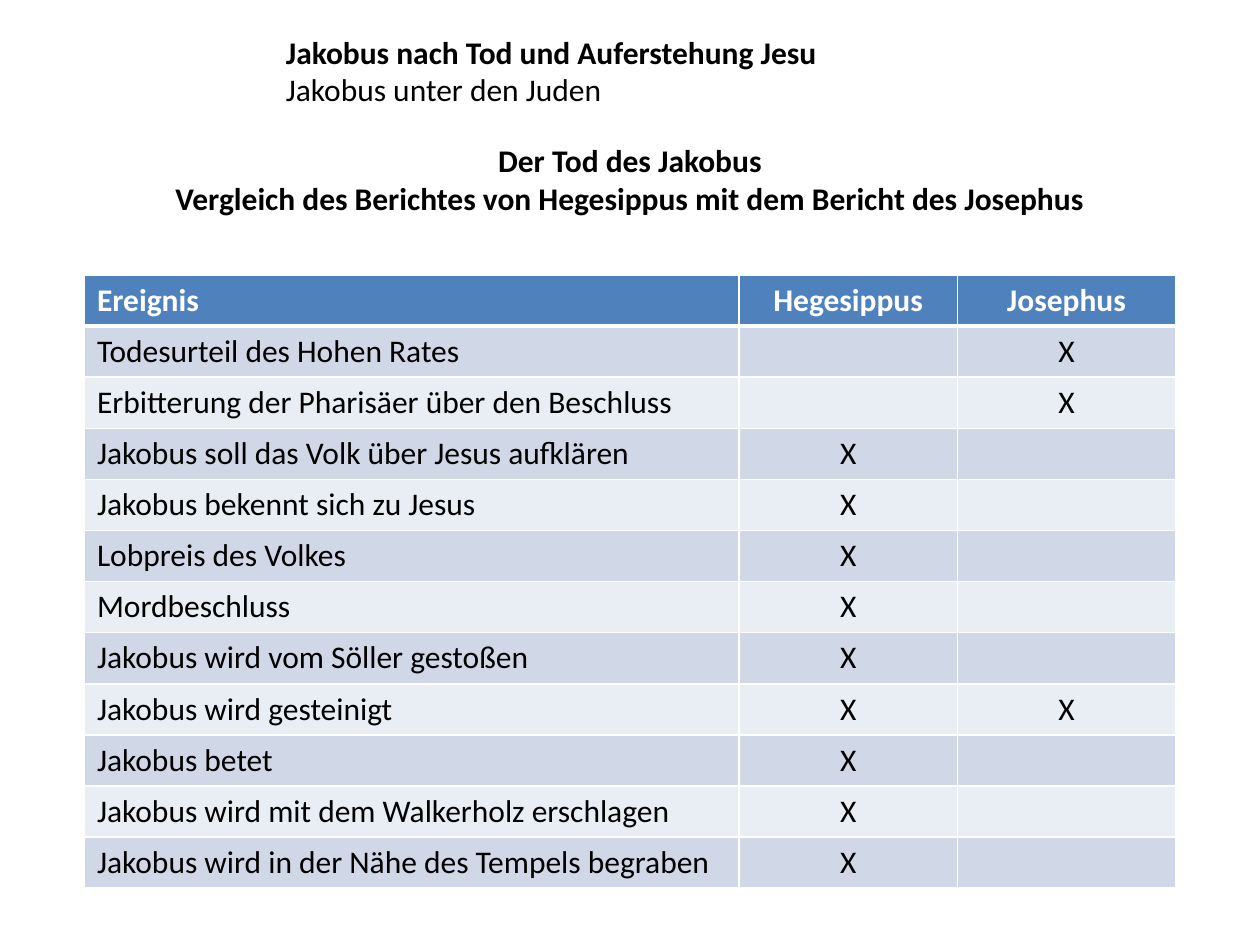
from lxml import etree
from pptx import Presentation
from pptx import util as u
from pptx.dml.color import RGBColor
from pptx.enum import text
from pptx.oxml.ns import qn

BLACK = RGBColor(0x00, 0x00, 0x00)
WHITE = RGBColor(0xFF, 0xFF, 0xFF)
HEADER = RGBColor(0x4F, 0x81, 0xBD)
BANDS = RGBColor(0xD0, 0xD8, 0xE8), RGBColor(0xE9, 0xED, 0xF4)
FONT, SIZE = "Calibri", u.Pt(18)
LEFT, CENTER = text.PP_ALIGN.LEFT, text.PP_ALIGN.CENTER

COLUMNS = ("Ereignis", "Hegesippus", "Josephus")
COLUMN_SHARES = (0.6, 0.2, 0.2)
EVENTS = [
    ("Todesurteil des Hohen Rates", "", "X"),
    ("Erbitterung der Pharisäer über den Beschluss", "", "X"),
    ("Jakobus soll das Volk über Jesus aufklären", "X", ""),
    ("Jakobus bekennt sich zu Jesus", "X", ""),
    ("Lobpreis des Volkes", "X", ""),
    ("Mordbeschluss", "X", ""),
    ("Jakobus wird vom Söller gestoßen", "X", ""),
    ("Jakobus wird gesteinigt", "X", "X"),
    ("Jakobus betet", "X", ""),
    ("Jakobus wird mit dem Walkerholz erschlagen", "X", ""),
    ("Jakobus wird in der Nähe des Tempels begraben", "X", ""),
]


def style_paragraph(p, color, bold, align):
    p.alignment = align
    p.font.name, p.font.size, p.font.bold = FONT, SIZE, bold
    p.font.color.rgb = color
    for r in p.runs:
        r.font.name, r.font.size, r.font.bold = FONT, SIZE, bold
        r.font.color.rgb = color


def add_heading(s, box, lines, align, wrap):
    """Place (wording, bold) lines in one text box."""
    tf = s.shapes.add_textbox(*box).text_frame
    tf.word_wrap = wrap
    tf.auto_size = text.MSO_AUTO_SIZE.SHAPE_TO_FIT_TEXT
    tf.text = "\n".join(wording for wording, _ in lines)
    for p, (_, bold) in zip(tf.paragraphs, lines):
        style_paragraph(p, BLACK, bold, align)


def set_borders(cell, bottom, top):
    """Draw white cell borders, 1 pt at the sides."""
    tc_pr = cell._tc.get_or_add_tcPr()
    for side, points in (("L", 1), ("R", 1), ("T", top), ("B", bottom)):
        ln = etree.SubElement(tc_pr, qn(f"a:ln{side}"), w=str(u.Pt(points)))
        fill = etree.SubElement(ln, qn("a:solidFill"))
        etree.SubElement(fill, qn("a:srgbClr"), val=str(WHITE))


def add_comparison(s, box):
    rows = [COLUMNS, *EVENTS]
    width, height = box[2:]
    table = s.shapes.add_table(len(rows), len(COLUMNS), *box).table
    for column, share in zip(table.columns, COLUMN_SHARES):
        column.width = int(width * share)
    for i, row in enumerate(rows):
        table.rows[i].height = height // len(rows)
        head = i == 0
        for j, wording in enumerate(row):
            cell = table.cell(i, j)
            set_borders(cell, bottom=3 if head else 1, top=3 if i == 1 else 1)
            cell.fill.solid()
            cell.fill.fore_color.rgb = HEADER if head else BANDS[(i - 1) % 2]
            cell.text = wording
            style_paragraph(cell.text_frame.paragraphs[0],
                            WHITE if head else BLACK, head,
                            CENTER if j else LEFT)


def main():
    prs = Presentation()
    prs.slide_width, prs.slide_height = u.Inches(10), u.Inches(7.5)
    s = prs.slides.add_slide(prs.slide_layouts[6])

    def share(x, y, w, h):
        return (int(prs.slide_width * x), int(prs.slide_height * y),
                int(prs.slide_width * w), int(prs.slide_height * h))

    add_heading(s, share(0.217, 0.028, 0.445, 0.095),
                [("Jakobus nach Tod und Auferstehung Jesu", True),
                 ("Jakobus unter den Juden", False)], LEFT, False)
    add_heading(s, share(0, 0.143, 1, 0.095),
                [("Der Tod des Jakobus", True),
                 ("Vergleich des Berichtes von Hegesippus "
                  "mit dem Bericht des Josephus", True)], CENTER, True)
    add_comparison(s, share(0.067, 0.291, 0.866, 0.649))
    prs.save("out.pptx")


if __name__ == "__main__":
    main()
